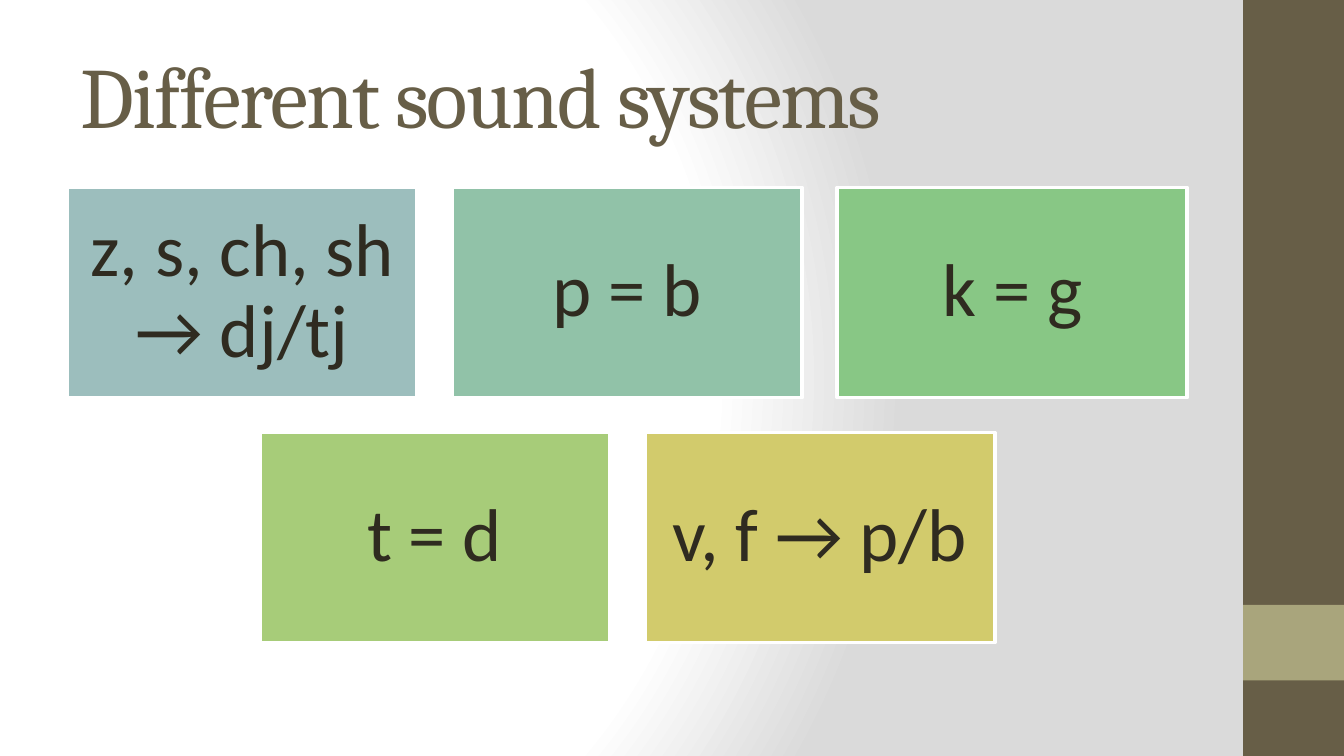
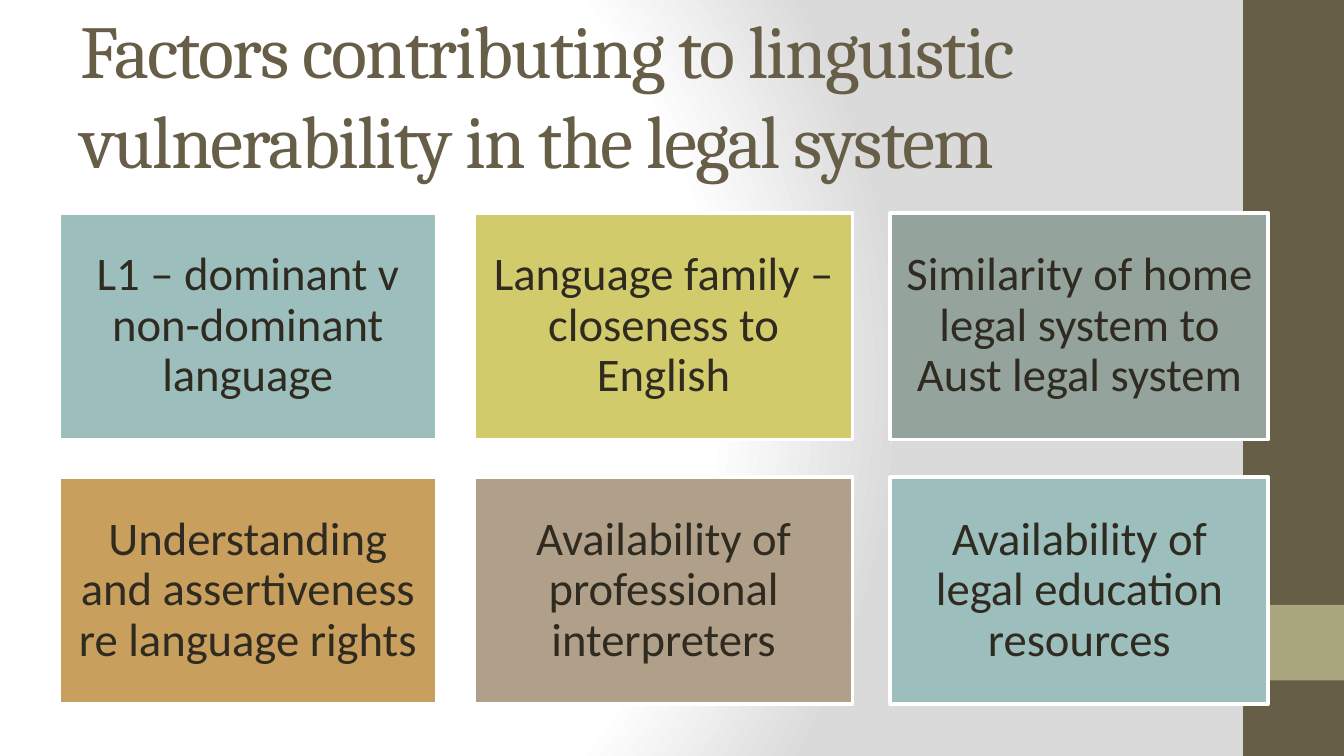
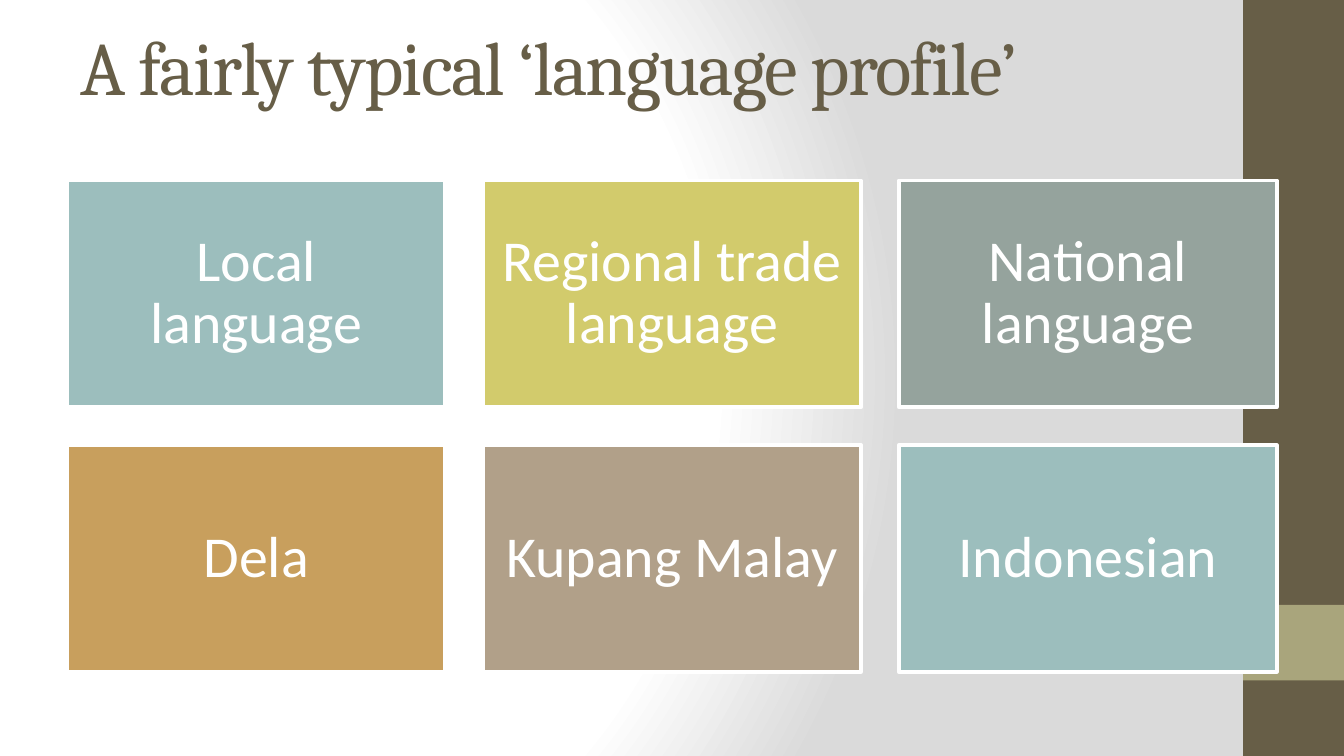
from pptx import Presentation
from pptx.dml.color import RGBColor
from pptx.enum import shapes, text
from pptx.oxml import parse_xml
from pptx.oxml.ns import nsdecls
from pptx.util import Pt

WIDTH, HEIGHT = 720, 405
COLUMNS = 3

WHITE = RGBColor(0xFF, 0xFF, 0xFF)
GREY = RGBColor(0xDA, 0xDA, 0xDA)
INK = RGBColor(0x2F, 0x2B, 0x20)
BROWN = RGBColor(0x67, 0x5E, 0x47)
KHAKI = RGBColor(0xA9, 0xA5, 0x7C)
TEAL = RGBColor(0x9C, 0xBE, 0xBD)
SEA = RGBColor(0x91, 0xC2, 0xA8)
GREEN = RGBColor(0x88, 0xC7, 0x85)
LIME = RGBColor(0xA7, 0xCC, 0x79)
YELLOW = RGBColor(0xD2, 0xCB, 0x6C)
SAGE = RGBColor(0x95, 0xA3, 0x9D)
OCHRE = RGBColor(0xC8, 0x9F, 0x5D)
TAUPE = RGBColor(0xB1, 0xA0, 0x89)

SOUND_COLOURS = [TEAL, SEA, GREEN, LIME, YELLOW]
TOPIC_COLOURS = [TEAL, YELLOW, SAGE, OCHRE, TAUPE, TEAL]


def set_all(obj, **values):
    for name, value in values.items():
        setattr(obj, name, value)


class Deck:
    def __init__(self):
        self.prs = Presentation()
        set_all(self.prs, slide_width=Pt(WIDTH), slide_height=Pt(HEIGHT))
        self.master = self.prs.slide_master
        self.slide = None

    def new_slide(self):
        self.slide = self.prs.slides.add_slide(self.prs.slide_layouts[5])

    def add_words(self, tf, words, font, size, colour, align):
        set_all(tf, word_wrap=True, auto_size=text.MSO_AUTO_SIZE.NONE,
                vertical_anchor=text.MSO_ANCHOR.MIDDLE)
        p = tf.paragraphs[0]
        p.alignment = align
        r = p.add_run()
        r.text = words
        set_all(r.font, name=font, size=Pt(size))
        r.font.color.rgb = colour
        return p, r

    def title(self, words, size=40, box=(36, 16.5, 600, 67.5), margin_bottom=3.6):
        sp = self.slide.shapes.title
        left, top, width, height = map(Pt, box)
        set_all(sp, left=left, top=top, width=width, height=height)
        sp.text_frame.margin_bottom = Pt(margin_bottom)
        _, r = self.add_words(sp.text_frame, words, "Cambria", size, BROWN,
                              text.PP_ALIGN.LEFT)
        r.font._element.set("spc", "-100")

    def rect(self, left, top, width, height, fill):
        sp = self.slide.shapes.add_shape(
            shapes.MSO_SHAPE.RECTANGLE, *map(Pt, (left, top, width, height)))
        sp.shadow.inherit = False
        sp.fill.solid()
        sp.fill.fore_color.rgb = fill
        sp.line.fill.background()
        return sp

    def tile(self, words, box, fill, size, colour):
        sp = self.rect(*box, fill)
        sp.line.color.rgb = WHITE
        sp.line.width = Pt(2)
        tf = sp.text_frame
        inset = Pt(0.3 * size)
        set_all(tf, margin_left=inset, margin_right=inset,
                margin_top=inset, margin_bottom=inset)
        p, _ = self.add_words(tf, words, "Calibri", size, colour,
                              text.PP_ALIGN.CENTER)
        p.line_spacing = 0.9

    def tile_grid(self, labels, fills, left, top, width, size, colour=INK):
        """Lay tiles in rows of three, with a short last row centred."""
        height, gap = 0.6 * width, 0.1 * width
        for i, (label, fill) in enumerate(zip(labels, fills)):
            row, col = divmod(i, COLUMNS)
            missing = max(0, (row + 1) * COLUMNS - len(labels))
            x = left + (col + missing / 2) * (width + gap)
            y = top + row * (height + gap)
            self.tile(label, (x, y, width, height), fill, size, colour)

    def master_background(self):
        self.master.background.fill.background()
        bg = self.master.element.xpath("p:cSld/p:bg/p:bgPr")[0]
        stops = "".join(
            f'<a:gs pos="{pos}000"><a:srgbClr val="{colour}"/></a:gs>'
            for pos, colour in [(0, WHITE), (75, WHITE), (100, GREY)])
        bg.replace(bg[0], parse_xml(
            f'<a:gradFill {nsdecls("a")} rotWithShape="1">'
            f'<a:gsLst>{stops}</a:gsLst><a:path path="circle">'
            '<a:fillToRect l="20000" t="50000" r="100000" b="50000"/>'
            '</a:path></a:gradFill>'))

    def master_bands(self):
        """Draw the side bands and move them to the master."""
        for top, height, fill in [(0, HEIGHT, BROWN), (324, 40.5, KHAKI)]:
            band = self.rect(666, top, 54, height, fill)
            self.master.shapes.element.append(band.element)


def main():
    deck = Deck()
    deck.master_background()

    deck.new_slide()
    deck.master_bands()
    deck.title("Different sound systems", size=46)
    deck.tile_grid(
        ["z, s, ch, sh → dj/tj", "p = b", "k = g", "t = d", "v, f → p/b"],
        SOUND_COLOURS, left=36, top=100.5, width=187.5, size=40)

    deck.new_slide()
    deck.title("Factors contributing to linguistic vulnerability "
               "in the legal system")
    deck.tile_grid(
        ["L1 – dominant v non-dominant language",
         "Language family – closeness to English",
         "Similarity of home legal system to Aust legal system",
         "Understanding and assertiveness re language rights",
         "Availability of professional interpreters",
         "Availability of legal education resources"],
        TOPIC_COLOURS, left=31.5, top=114, width=202.5, size=25)

    deck.new_slide()
    deck.title("A fairly typical ‘language profile’", size=40.5,
               box=(36, 21.5, 648, 75.5), margin_bottom=52)
    deck.tile_grid(
        ["Local language", "Regional trade language", "National language",
         "Dela", "Kupang Malay", "Indonesian"],
        TOPIC_COLOURS, left=36, top=96.75, width=202.5, size=31, colour=WHITE)

    deck.prs.save("out.pptx")


if __name__ == "__main__":
    main()
